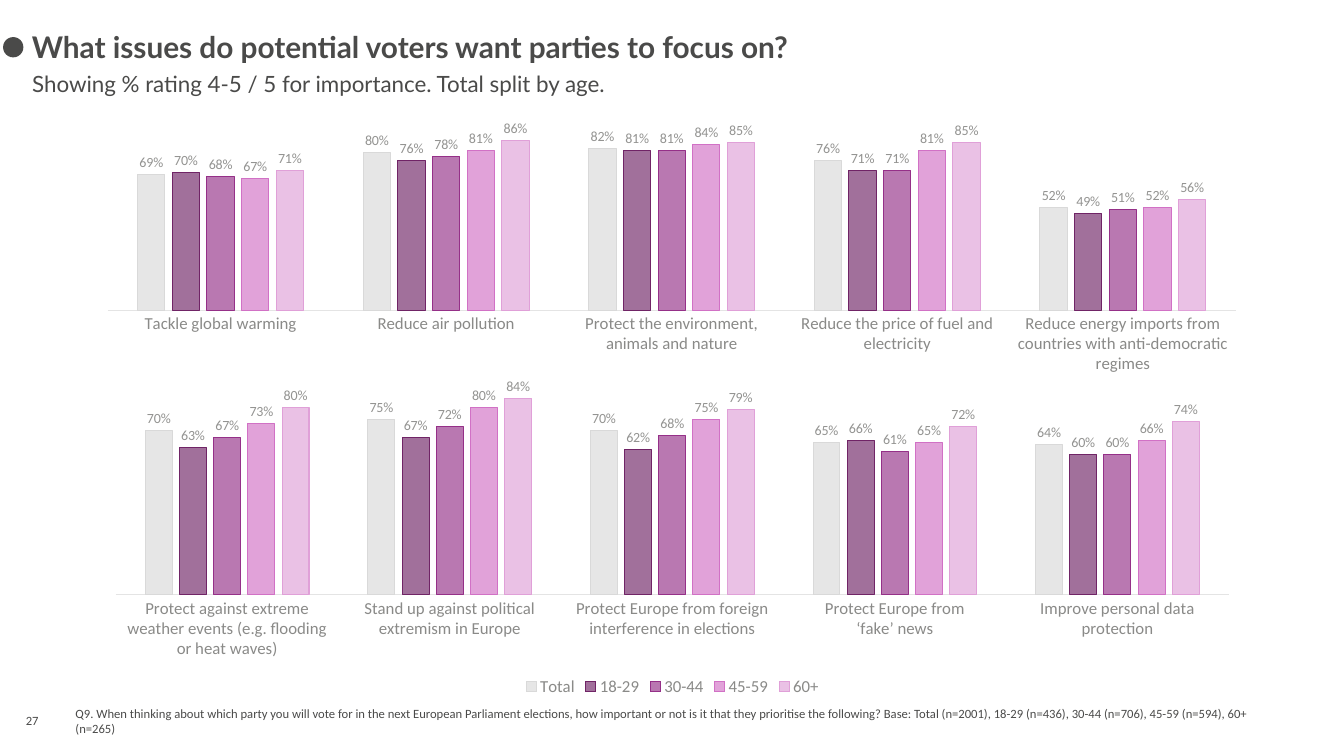
from lxml import etree
from pptx import Presentation
from pptx.chart.data import CategoryChartData
from pptx.dml.color import RGBColor
from pptx.enum.chart import XL_CHART_TYPE, XL_LABEL_POSITION, XL_LEGEND_POSITION, XL_TICK_MARK
from pptx.enum.shapes import MSO_SHAPE
from pptx.enum.text import MSO_ANCHOR, PP_ALIGN
from pptx.oxml.ns import qn
from pptx.util import Pt

COLUMNS = XL_CHART_TYPE.COLUMN_CLUSTERED
OUTSIDE = XL_LABEL_POSITION.OUTSIDE_END
BOTTOM = XL_LEGEND_POSITION.BOTTOM
NO_TICK = XL_TICK_MARK.NONE
OVAL = MSO_SHAPE.OVAL
TOP, MIDDLE = MSO_ANCHOR.TOP, MSO_ANCHOR.MIDDLE
LEFT, CENTER = PP_ALIGN.LEFT, PP_ALIGN.CENTER

DARK = RGBColor(0x4A, 0x4A, 0x49)
GREY = RGBColor(0x8A, 0x8A, 0x88)
LABEL = RGBColor(0x93, 0x93, 0x91)
RULE = RGBColor(0xE4, 0xE4, 0xE4)
AGES = {
    "Total": RGBColor(0xD9, 0xD9, 0xD9),
    "18-29": RGBColor(0x70, 0x24, 0x66),
    "30-44": RGBColor(0x95, 0x30, 0x88),
    "45-59": RGBColor(0xD1, 0x71, 0xC5),
    "60+": RGBColor(0xE0, 0xA0, 0xD8),
}
UPPER = {
    "Tackle global warming": (69, 70, 68, 67, 71),
    "Reduce air pollution": (80, 76, 78, 81, 86),
    "Protect the environment, animals and nature": (82, 81, 81, 84, 85),
    "Reduce the price of fuel and electricity": (76, 71, 71, 81, 85),
    "Reduce energy imports from countries with anti-democratic regimes": (52, 49, 51, 52, 56),
}
LOWER = {
    "Protect against extreme weather events (e.g. flooding or heat waves)": (70, 63, 67, 73, 80),
    "Stand up against political extremism in Europe": (75, 67, 72, 80, 84),
    "Protect Europe from foreign interference in elections": (70, 62, 68, 75, 79),
    "Protect Europe from\n‘fake’ news": (65, 66, 61, 65, 72),
    "Improve personal data protection": (64, 60, 60, 66, 74),
}
NOTE = (
    "Q9. When thinking about which party you will vote for in the next European Parliament "
    "elections, how important or not is it that they prioritise the following? Base: Total "
    "(n=2001), 18-29 (n=436), 30-44 (n=706), 45-59 (n=594), 60+ (n=265)"
)


def set_font(font, size, color, face="Calibri", bold=False):
    font.size = Pt(size)
    font.name = face
    font.bold = bold
    font.color.rgb = color


def add_text(slide, box, text, size, face="Calibri", bold=False,
             anchor=TOP, align=LEFT, inset=7.2, spacing=None):
    frame = slide.shapes.add_textbox(*map(Pt, box)).text_frame
    frame.word_wrap = True
    frame.vertical_anchor = anchor
    frame.margin_left = frame.margin_right = Pt(inset)
    para = frame.paragraphs[0]
    para.text = text
    para.alignment = align
    para.line_spacing = spacing
    set_font(para.font, size, DARK, face, bold)


def add_dot(slide, left, top, size):
    dot = slide.shapes.add_shape(OVAL, Pt(left), Pt(top), Pt(size), Pt(size))
    dot.shadow.inherit = False
    dot.fill.solid()
    dot.fill.fore_color.rgb = DARK
    dot.line.fill.background()


def place_plot(chart, plot):
    area = chart.plots[0]._element.getparent()
    old = area.find(qn("c:layout"))
    if old is not None:
        area.remove(old)
    layout = etree.Element(qn("c:layout"))
    area.insert(0, layout)
    manual = etree.SubElement(layout, qn("c:manualLayout"))
    items = [("layoutTarget", "inner"), ("xMode", "edge"), ("yMode", "edge")]
    for tag, value in items + list(zip("xywh", plot)):
        etree.SubElement(manual, qn("c:" + tag)).set("val", str(value))


def style_bars(bars, color):
    bars.format.fill.solid()
    bars.format.fill.fore_color.rgb = color
    tint = bars._element.find(qn("c:spPr")).find(qn("a:solidFill"))[0]
    etree.SubElement(tint, qn("a:alpha")).set("val", "65000")
    bars.format.line.color.rgb = color
    bars.format.line.width = Pt(0.75)
    labels = bars.data_labels
    labels.show_value = True
    labels.number_format = '0"%"'
    labels.number_format_is_linked = False
    labels.position = OUTSIDE
    set_font(labels.font, 10, LABEL)


def add_bars(slide, box, issues, plot, legend=False):
    data = CategoryChartData()
    data.categories = list(issues)
    for age, values in zip(AGES, zip(*issues.values())):
        data.add_series(age, values)
    chart = slide.shapes.add_chart(COLUMNS, *map(Pt, box), data).chart
    set_font(chart.font, 10, DARK, "Lato")
    chart.has_title = False
    chart.has_legend = legend
    if legend:
        chart.legend.position = BOTTOM
        chart.legend.include_in_layout = False
        set_font(chart.legend.font, 12, GREY)
    group = chart.plots[0]
    group.vary_by_categories = False
    group.gap_width = 219
    group.overlap = -27
    for bars, color in zip(group.series, AGES.values()):
        style_bars(bars, color)
    scale = chart.value_axis
    scale.minimum_scale = 0
    scale.maximum_scale = 100
    scale.has_major_gridlines = False
    scale.visible = False
    axis = chart.category_axis
    axis.major_tick_mark = axis.minor_tick_mark = NO_TICK
    axis.format.line.color.rgb = RULE
    axis.format.line.width = Pt(0.75)
    set_font(axis.tick_labels.font, 12, GREY)
    place_plot(chart, plot)


def main():
    deck = Presentation()
    deck.slide_width, deck.slide_height = Pt(960), Pt(540)
    slide = deck.slides.add_slide(deck.slide_layouts[6])
    add_bars(slide, (66.25, 63.4, 828, 240.5), UPPER, (0.013, 0.073, 0.973, 0.585))
    add_dot(slide, 2.2, 26.5, 14.5)
    add_text(slide, (15.8, 21.6, 834, 36),
             "What issues do potential voters want parties to focus on?",
             21.3, "Lato", True, spacing=0.8)
    add_text(slide, (7.2, 500.4, 31.7, 28.8), "27", 9, anchor=MIDDLE, align=CENTER)
    add_text(slide, (46.8, 500.4, 867.6, 28.8), NOTE, 9, anchor=MIDDLE)
    add_bars(slide, (66.25, 252.7, 828, 247.7), LOWER, (0.02, 0.02, 0.96, 0.675), True)
    add_text(slide, (23, 46.8, 569.5, 26.6),
             "Showing % rating 4-5 / 5 for importance. Total split by age.",
             16, "Lato", inset=0)
    deck.save("out.pptx")


if __name__ == "__main__":
    main()
